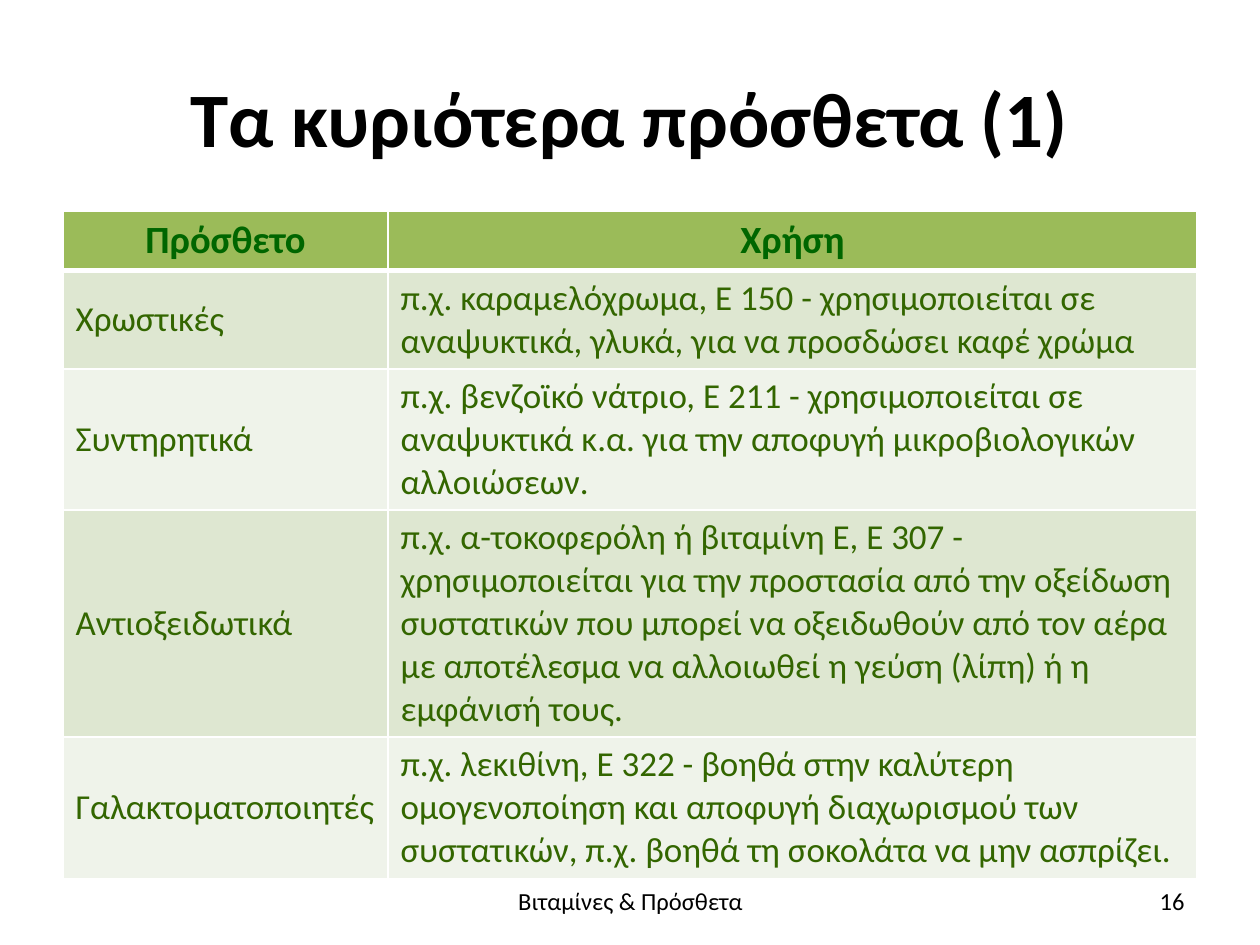
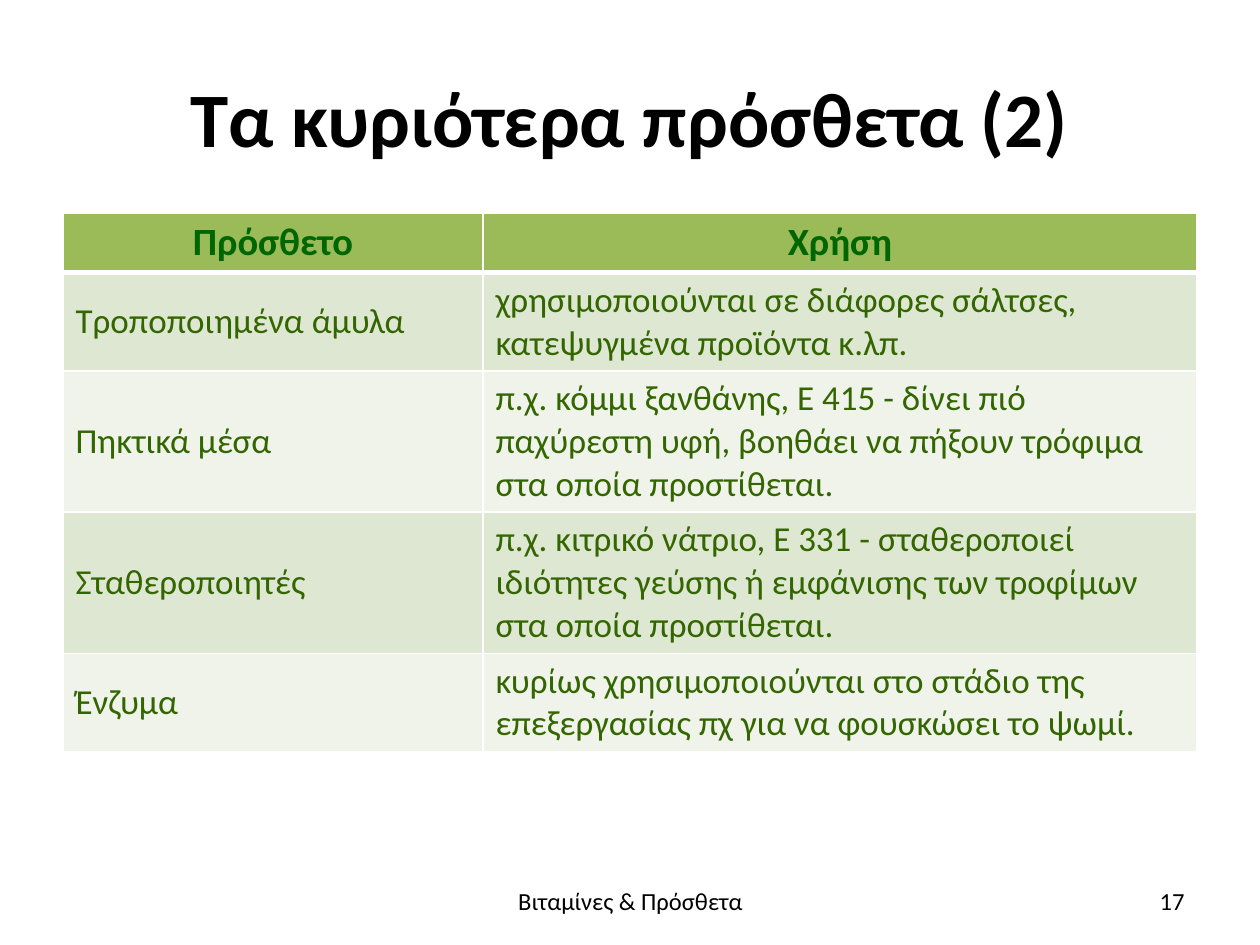
from lxml import etree
from pptx import Presentation
from pptx.dml.color import RGBColor
from pptx.enum.text import MSO_ANCHOR, PP_ALIGN
from pptx.oxml.ns import qn
from pptx.util import Emu, Pt

LEFT, CENTER, RIGHT = PP_ALIGN.LEFT, PP_ALIGN.CENTER, PP_ALIGN.RIGHT
MIDDLE = MSO_ANCHOR.MIDDLE

# Shared style
FONT = "Calibri"
BLACK = RGBColor(0x00, 0x00, 0x00)
WHITE = RGBColor(0xFF, 0xFF, 0xFF)
HEAD_TEXT = RGBColor(0x00, 0x66, 0x00)
BODY_TEXT = RGBColor(0x33, 0x66, 0x00)
HEAD_FILL = RGBColor(0x9B, 0xBB, 0x59)
BANDS = [RGBColor(0xEF, 0xF3, 0xEA), RGBColor(0xDE, 0xE7, 0xD1)]
PX = 914400 / 126
TABLE_LEFT, TABLE_WIDTH = 63, 1134
FIRST_NUMBER = 16
FOOTER = "Βιταμίνες & Πρόσθετα"
HEADER = ("Πρόσθετο", "Χρήση")

# Table top, first column width, row heights and rows of each slide
TABLES = [
    (211, 325, [57, 98, 141, 227, 140], [
        ("Χρωστικές",
         "π.χ. καραμελόχρωμα, Ε 150 - χρησιμοποιείται σε αναψυκτικά, γλυκά, "
         "για να προσδώσει καφέ χρώμα"),
        ("Συντηρητικά",
         "π.χ. βενζοϊκό νάτριο, Ε 211 - χρησιμοποιείται σε αναψυκτικά κ.α. "
         "για την αποφυγή μικροβιολογικών αλλοιώσεων."),
        ("Αντιοξειδωτικά",
         "π.χ. α-τοκοφερόλη ή βιταμίνη Ε, Ε 307 - χρησιμοποιείται για την "
         "προστασία από την οξείδωση συστατικών που μπορεί να οξειδωθούν από "
         "τον αέρα με αποτέλεσμα να αλλοιωθεί η γεύση (λίπη) ή η εμφάνισή τους."),
        ("Γαλακτοματοποιητές",
         "π.χ. λεκιθίνη, Ε 322 - βοηθά στην καλύτερη ομογενοποίηση και αποφυγή "
         "διαχωρισμού των συστατικών, π.χ. βοηθά τη σοκολάτα να μην ασπρίζει."),
    ]),
    (213, 420, [58, 98, 141, 141, 98], [
        ("Τροποποιημένα άμυλα",
         "χρησιμοποιούνται σε διάφορες σάλτσες, κατεψυγμένα προϊόντα κ.λπ."),
        ("Πηκτικά μέσα",
         "π.χ. κόμμι ξανθάνης, Ε 415 - δίνει πιό παχύρεστη υφή, βοηθάει να "
         "πήξουν τρόφιμα στα οποία προστίθεται."),
        ("Σταθεροποιητές",
         "π.χ. κιτρικό νάτριο, Ε 331 - σταθεροποιεί ιδιότητες γεύσης ή "
         "εμφάνισης των τροφίμων στα οποία προστίθεται."),
        ("Ένζυμα",
         "κυρίως χρησιμοποιούνται στο στάδιο της επεξεργασίας πχ για να "
         "φουσκώσει το ψωμί."),
    ]),
]


def px(*lengths):
    return [Emu(round(n * PX)) for n in lengths]


def write(tf, text, size, color, align, bold=False):
    tf.word_wrap = True
    p = tf.paragraphs[0]
    p.alignment = align
    r = p.add_run()
    r.text = text
    r.font.name, r.font.size, r.font.bold = FONT, Pt(size), bold
    r.font.color.rgb = color


prs = Presentation()
prs.slide_width, prs.slide_height = px(1260, 945)

for i, (top, first_width, heights, rows) in enumerate(TABLES):
    s = prs.slides.add_slide(prs.slide_layouts[5])

    # Title
    title = s.shapes.title
    title.left, title.top, title.width, title.height = px(63, 38, 1134, 157)
    title.text_frame.vertical_anchor = MIDDLE
    write(title.text_frame, f"Τα κυριότερα πρόσθετα ({i + 1})", 44, BLACK, CENTER, True)

    # Table grid
    table = s.shapes.add_table(len(heights), 2, *px(
        TABLE_LEFT, top, TABLE_WIDTH, sum(heights))).table
    table.horz_banding = False
    for column, width in zip(table.columns, px(first_width, TABLE_WIDTH - first_width)):
        column.width = width
    for row, height in zip(table.rows, px(*heights)):
        row.height = height

    # Table cells: white rules, thicker below the header
    for n, texts in enumerate([HEADER] + rows):
        for cell, text in zip(table.rows[n].cells, texts):
            cell.vertical_anchor = MIDDLE
            tcPr = cell._tc.get_or_add_tcPr()
            for side in "LRTB":
                thick = (n, side) in [(0, "B"), (1, "T")]
                ln = etree.SubElement(tcPr, qn(f"a:ln{side}"), w=str(Pt(3 if thick else 1)))
                fill = etree.SubElement(ln, qn("a:solidFill"))
                etree.SubElement(fill, qn("a:srgbClr"), val=str(WHITE))
            cell.fill.solid()
            if n == 0:
                cell.fill.fore_color.rgb = HEAD_FILL
                write(cell.text_frame, text, 22, HEAD_TEXT, CENTER, True)
            else:
                cell.fill.fore_color.rgb = BANDS[n % 2]
                write(cell.text_frame, text, 20, BODY_TEXT, LEFT)

    # Footer and slide number
    for text, left, width, align in [(FOOTER, 431, 399, CENTER),
                                     (str(FIRST_NUMBER + i), 903, 294, RIGHT)]:
        tf = s.shapes.add_textbox(*px(left, 876, width, 50)).text_frame
        tf.vertical_anchor = MIDDLE
        write(tf, text, 14, BLACK, align)

prs.save("out.pptx")
